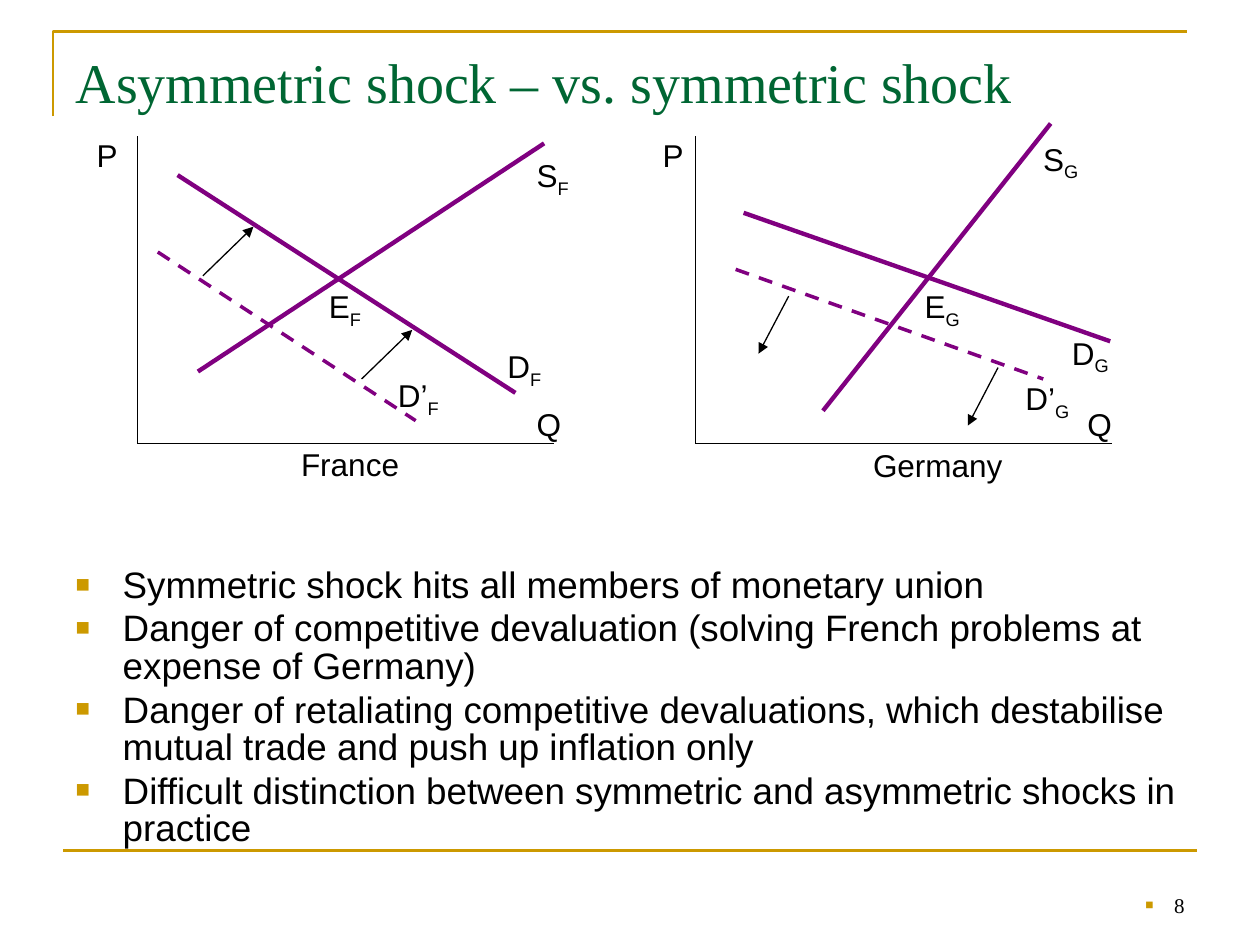
from dataclasses import dataclass

from lxml import etree
from pptx import Presentation
from pptx.dml.color import RGBColor
from pptx.enum.dml import MSO_LINE
from pptx.enum.shapes import MSO_CONNECTOR
from pptx.enum.text import MSO_ANCHOR, MSO_AUTO_SIZE, PP_ALIGN
from pptx.oxml.ns import qn
from pptx.util import Cm, Pt

STRAIGHT = MSO_CONNECTOR.STRAIGHT
DASH = MSO_LINE.DASH
LEFT, RIGHT = PP_ALIGN.LEFT, PP_ALIGN.RIGHT
TOP, MIDDLE, BOTTOM = MSO_ANCHOR.TOP, MSO_ANCHOR.MIDDLE, MSO_ANCHOR.BOTTOM
NO_AUTOFIT = MSO_AUTO_SIZE.NONE


@dataclass(frozen=True)
class Theme:
    """Colours, fonts, type sizes and line widths of the slide."""
    gold: str = "CC9900"
    green: str = "006633"
    purple: str = "800080"
    black: str = "000000"
    serif: str = "Times New Roman"
    sans: str = "Arial"
    title_size: float = 32
    body_size: float = 21
    label_size: float = 18
    number_size: float = 12
    frame_line: float = 1.5
    curve_line: float = 2.5
    shifted_line: float = 2
    thin_line: float = 0.75


THEME = Theme()

FRANCE = {
    "name": ("France", 3.05, 6.1),
    "subscript": "F",
    "curves": [((1.22, 4.75), (8.2, 0.15)), ((0.81, 0.79), (7.62, 5.18))],
    "shifted": ((0.41, 2.34), (5.61, 5.74)),
    "arrows": [((1.32, 2.82), (2.34, 1.83)), ((4.52, 4.9), (5.54, 3.91))],
    "axis_labels": [("P", -1.07, -0.13), ("Q", 7.8, 5.31)],
    "labels": [("S", 7.8, 0.28), ("D", 7.21, 4.14), ("E", 3.61, 2.92), ("D’", 5, 4.72)],
}
GERMANY = {
    "name": ("Germany", 3.33, 6.12),
    "subscript": "G",
    "curves": [((2.57, 5.54), (7.16, -0.25)), ((0.97, 1.55), (8.36, 4.14))],
    "shifted": ((0.81, 2.69), (7.01, 4.9)),
    "arrows": [((1.88, 3.23), (1.27, 4.39)), ((6.1, 4.67), (5.49, 5.84))],
    "axis_labels": [("P", -0.91, -0.13), ("Q", 7.65, 5.31)],
    "labels": [("S", 6.76, -0.05), ("D", 7.34, 3.86), ("E", 4.37, 2.92), ("D’", 6.4, 4.78)],
}
POINTS = [
    "Symmetric shock hits all members of monetary union",
    "Danger of competitive devaluation (solving French problems at expense of Germany)",
    "Danger of retaliating competitive devaluations, which destabilise mutual trade and push up inflation only",
    "Difficult distinction between symmetric and asymmetric shocks in practice",
]


def place(shape, left, top, width, height):
    """Move and size a shape, in centimetres."""
    shape.left, shape.top = Cm(left), Cm(top)
    shape.width, shape.height = Cm(width), Cm(height)


def style_text(paragraph, family, size, color, alignment=LEFT):
    """Set the font and alignment of a paragraph."""
    paragraph.alignment = alignment
    paragraph.font.name = family
    paragraph.font.size = Pt(size)
    paragraph.font.color.rgb = RGBColor.from_string(color)


def style_line(line, color, width):
    """Set the colour and width of a line."""
    line.color.rgb = RGBColor.from_string(color)
    line.width = Pt(width)


def add_bullet(paragraph, indent):
    """Give a paragraph a gold square bullet with a hanging indent."""
    properties = paragraph._p.get_or_add_pPr()
    properties.set("marL", str(Cm(indent)))
    properties.set("indent", str(-Cm(indent)))
    color = etree.SubElement(properties, qn("a:buClr"))
    etree.SubElement(color, qn("a:srgbClr"), val=THEME.gold)
    etree.SubElement(properties, qn("a:buSzPct"), val="65000")
    etree.SubElement(properties, qn("a:buFont"), typeface=THEME.sans)
    etree.SubElement(properties, qn("a:buChar"), char="■")


def add_line(slide, start, end, color, width, dash=None, arrow=False):
    """Draw a straight line between two points in centimetres."""
    ends = [Cm(value) for value in (*start, *end)]
    connector = slide.shapes.add_connector(STRAIGHT, *ends)
    style_line(connector.line, color, width)
    if dash is not None:
        connector.line.dash_style = dash
    properties = connector._element.spPr
    if arrow:
        etree.SubElement(properties.find(qn("a:ln")), qn("a:tailEnd"), type="triangle")
    etree.SubElement(properties, qn("a:effectLst"))


def add_label(slide, left, top, width, text, subscript=""):
    """Add a diagram label with an optional subscript."""
    box = slide.shapes.add_textbox(Cm(left), Cm(top), Cm(width), Cm(1.02))
    box.text_frame.word_wrap = True
    paragraph = box.text_frame.paragraphs[0]
    style_text(paragraph, THEME.sans, THEME.label_size, THEME.black)
    paragraph.add_run().text = text
    if subscript:
        run = paragraph.add_run()
        run.text = subscript
        run._r.get_or_add_rPr().set("baseline", "-25000")


def add_frame(slide, left, top, width, height):
    """Draw the gold corner above the title and the rule below the body."""
    corner = slide.shapes.build_freeform(Cm(left), Cm(top + 1.7))
    corner.add_line_segments(
        [(Cm(left), Cm(top)), (Cm(left + width), Cm(top))], close=False)
    shape = corner.convert_to_shape()
    shape.shadow.inherit = False
    shape.fill.background()
    style_line(shape.line, THEME.gold, THEME.frame_line)
    bottom, inset = top + height, left + 0.2
    add_line(slide, (inset, bottom), (inset + width, bottom), THEME.gold, THEME.frame_line)


def fill_title(slide, left, top, width, height):
    """Place and format the title."""
    title = slide.shapes.title
    place(title, left, top, width, height)
    frame = title.text_frame
    frame.text = "Asymmetric shock – vs. symmetric shock"
    frame.vertical_anchor, frame.auto_size = MIDDLE, NO_AUTOFIT
    style_text(frame.paragraphs[0], THEME.serif, THEME.title_size, THEME.green)


def fill_body(slide, left, top, width, height):
    """Place the body list and format its bullets."""
    body = slide.placeholders[1]
    place(body, left, top, width, height)
    frame = body.text_frame
    frame.text = "\n".join(POINTS)
    frame.vertical_anchor, frame.auto_size = TOP, NO_AUTOFIT
    for paragraph in frame.paragraphs:
        add_bullet(paragraph, 0.95)
        paragraph.line_spacing = 0.85
        paragraph.space_before = Pt(3.5)
        style_text(paragraph, THEME.sans, THEME.body_size, THEME.black)


def add_market(slide, market, left, top, width, height):
    """Draw one country's supply and demand diagram."""
    def shift(points):
        """Move points from the diagram's box to the slide."""
        return [(left + x, top + y) for x, y in points]

    for axis_end in ((0, 0), (width, height)):
        add_line(slide, *shift([(0, height), axis_end]), THEME.black, THEME.thin_line)
    for curve in market["curves"]:
        add_line(slide, *shift(curve), THEME.purple, THEME.curve_line)
    add_line(slide, *shift(market["shifted"]), THEME.purple, THEME.shifted_line, dash=DASH)
    for arrow in market["arrows"]:
        add_line(slide, *shift(arrow), THEME.black, THEME.thin_line, arrow=True)
    for text, x, y in market["axis_labels"]:
        add_label(slide, left + x, top + y, 1.2, text)
    for text, x, y in market["labels"]:
        add_label(slide, left + x, top + y, 1.7, text, market["subscript"])
    name, x, y = market["name"]
    add_label(slide, left + x, top + y, 3.4, name)


def add_page_number(slide, left, top, width, height):
    """Add the bulleted page number at the lower right."""
    box = slide.shapes.add_textbox(Cm(left), Cm(top), Cm(width), Cm(height))
    frame = box.text_frame
    frame.word_wrap, frame.vertical_anchor = True, BOTTOM
    frame.text = "8"
    add_bullet(frame.paragraphs[0], 0.58)
    style_text(frame.paragraphs[0], THEME.serif, THEME.number_size, THEME.black, RIGHT)


def main():
    """Build the slide and save it."""
    presentation = Presentation()
    presentation.slide_width, presentation.slide_height = Cm(25.4), Cm(19.05)
    slide = presentation.slides.add_slide(presentation.slide_layouts[1])
    add_frame(slide, 1.07, 0.64, 22.86, 16.5)
    fill_title(slide, 1.27, 0.76, 22.86, 1.75)
    for market, left in ((FRANCE, 2.77), (GERMANY, 14.02)):
        add_market(slide, market, left, 2.74, 8.4, 6.2)
    fill_body(slide, 1.27, 11.33, 22.86, 6.4)
    add_page_number(slide, 18.21, 17.35, 5.92, 1.27)
    presentation.save("out.pptx")


if __name__ == "__main__":
    main()
